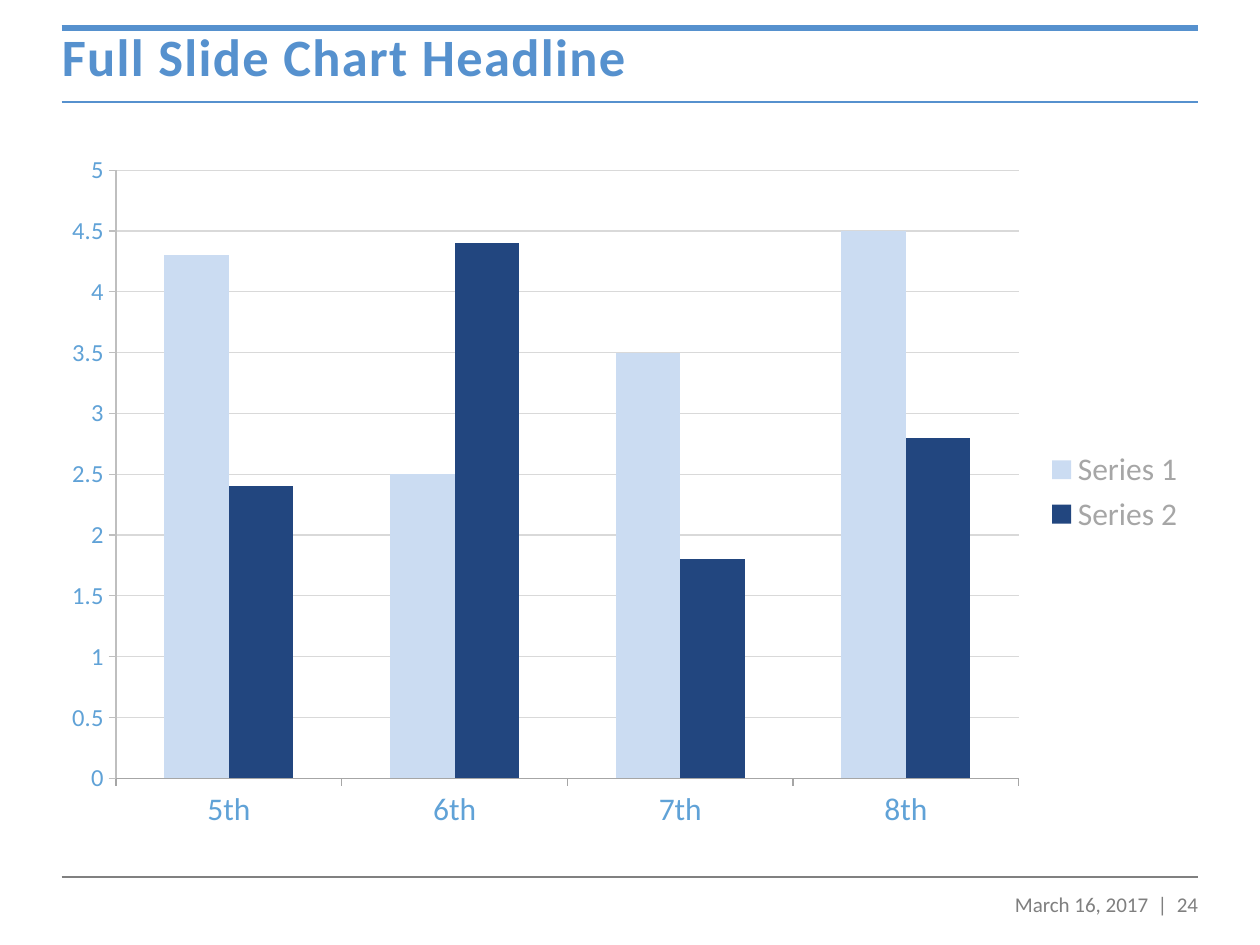
from dataclasses import dataclass
from lxml.etree import SubElement
from pptx import Presentation
from pptx.chart.data import CategoryChartData
from pptx.dml.color import RGBColor
from pptx.enum.chart import XL_CHART_TYPE, XL_LEGEND_POSITION, XL_TICK_MARK
from pptx.enum.shapes import MSO_CONNECTOR
from pptx.enum.text import MSO_ANCHOR, MSO_AUTO_SIZE, PP_ALIGN
from pptx.oxml.ns import qn
from pptx.util import Inches, Pt


@dataclass(frozen=True)
class Theme:
    face: str = "Calibri"
    blue: str = "5691CE"
    sky: str = "60A2D7"
    pale: str = "CBDCF2"
    navy: str = "22467F"
    rule: str = "808080"
    gray: str = "7F7F7F"
    mid: str = "A6A6A6"
    soft: str = "BFBFBF"
    faint: str = "D9D9D9"
    head: float = 30
    body: float = 18
    tick: float = 14
    foot: float = 12
    thin: float = 0.75
    line: float = 1
    bold: float = 3.5


class Deck:
    """Draw styled elements on a slide, with lengths in percent of its size."""

    def __init__(self, theme):
        self.theme = theme
        self.show = Presentation()
        self.show.slide_width, self.show.slide_height = Inches(10), Inches(7.5)
        self.slide = self.show.slides.add_slide(self.show.slide_layouts[5])

    def across(self, share):
        return round(self.show.slide_width * share / 100)

    def down(self, share):
        return round(self.show.slide_height * share / 100)

    def area(self, left, top, width, height):
        return self.across(left), self.down(top), self.across(width), self.down(height)

    def font(self, font, size, color, bold=False):
        font.name, font.size, font.bold = self.theme.face, Pt(size), bold
        font.color.rgb = RGBColor.from_string(color)

    def stroke(self, line, color, width):
        line.color.rgb = RGBColor.from_string(color)
        line.width = Pt(width)

    def rule(self, left, right, top, color, width):
        start, end, level = self.across(left), self.across(right), self.down(top)
        line = self.slide.shapes.add_connector(MSO_CONNECTOR.STRAIGHT, start, level, end, level)
        self.stroke(line.line, color, width)
        SubElement(line._element.spPr, qn("a:effectLst"))

    def label(self, shape, words, size, color, align, anchor, bold=False):
        frame = shape.text_frame
        frame.text = words
        frame.word_wrap = True
        frame.auto_size = MSO_AUTO_SIZE.NONE
        frame.vertical_anchor = anchor
        para = frame.paragraphs[0]
        para.alignment = align
        self.font(para.font, size, color, bold)
        return para

    def title(self, words, box):
        shape = self.slide.shapes.title
        shape.left, shape.top, shape.width, shape.height = self.area(*box)
        para = self.label(shape, words, self.theme.head, self.theme.blue,
                          PP_ALIGN.LEFT, MSO_ANCHOR.MIDDLE, True)
        para.line_spacing = 0.9
        para.runs[0]._r.get_or_add_rPr().set("spc", "80")

    def note(self, words, box):
        shape = self.slide.shapes.add_textbox(*self.area(*box))
        self.label(shape, words, self.theme.foot, self.theme.gray,
                   PP_ALIGN.RIGHT, MSO_ANCHOR.TOP)

    def axis(self, axis, size, color):
        axis.major_tick_mark = XL_TICK_MARK.OUTSIDE
        axis.minor_tick_mark = XL_TICK_MARK.NONE
        self.font(axis.tick_labels.font, size, self.theme.sky)
        self.stroke(axis.format.line, color, self.theme.thin)

    def chart(self, groups, series, box):
        theme = self.theme
        data = CategoryChartData()
        data.categories = groups
        for name, values in series.items():
            data.add_series(name, values)
        chart = self.slide.shapes.add_chart(
            XL_CHART_TYPE.COLUMN_CLUSTERED, *self.area(*box), data).chart
        self.font(chart.font, theme.body, theme.gray)
        chart.has_title = False
        chart.has_legend = True
        chart.legend.position = XL_LEGEND_POSITION.RIGHT
        chart.legend.include_in_layout = False
        self.font(chart.legend.font, theme.body, theme.mid)
        self.axis(chart.category_axis, theme.body, theme.mid)
        scale = chart.value_axis
        self.axis(scale, theme.tick, theme.soft)
        scale.minimum_scale, scale.maximum_scale, scale.major_unit = 0, 5, 0.5
        scale.tick_labels.number_format = "General"
        scale.tick_labels.number_format_is_linked = False
        self.stroke(scale.major_gridlines.format.line, theme.faint, theme.thin)
        plot = chart.plots[0]
        plot.gap_width, plot.overlap = 150, 0
        plot.vary_by_categories = False
        for bars, color in zip(plot.series, (theme.pale, theme.navy)):
            bars.format.fill.solid()
            bars.format.fill.fore_color.rgb = RGBColor.from_string(color)

    def save(self):
        self.show.save("out.pptx")


def main():
    theme = Theme()
    deck = Deck(theme)
    for top, color, width in ((10.8, theme.blue, theme.line),
                              (2.93, theme.blue, theme.bold),
                              (92.8, theme.rule, theme.line)):
        deck.rule(4.9, 95.1, top, color, width)
    deck.title("Full Slide Chart Headline", (3.9, 2.8, 91.2, 7.07))
    deck.chart(("5th", "6th", "7th", "8th"),
               {"Series 1": (4.3, 2.5, 3.5, 4.5), "Series 2": (2.4, 4.4, 1.8, 2.8)},
               (3.9, 14.93, 91.2, 74.27))
    deck.note("March 16, 2017  |  24", (77.1, 93.73, 19, 5.07))
    deck.save()


if __name__ == "__main__":
    main()
